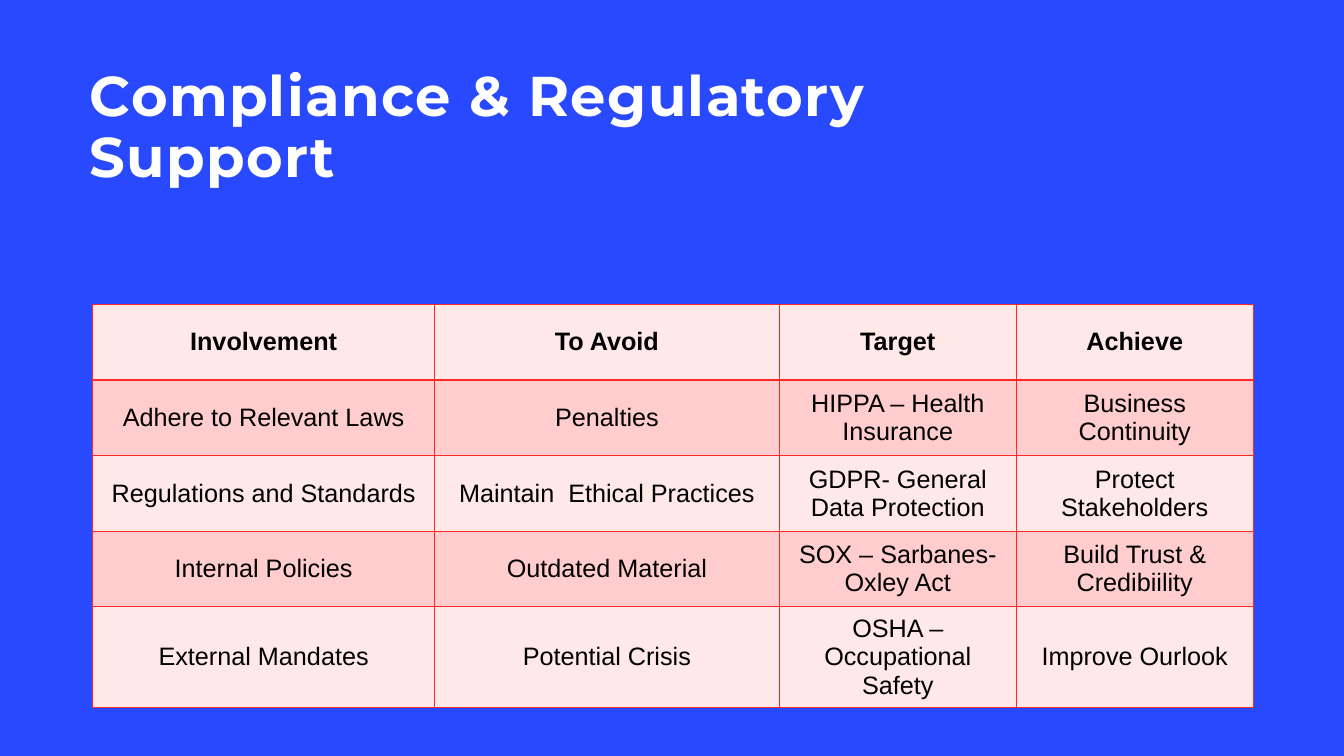
from lxml.etree import SubElement
from pptx import Presentation
from pptx.dml.color import RGBColor
from pptx.enum.text import MSO_ANCHOR, PP_ALIGN
from pptx.oxml.ns import qn
from pptx.util import Inches, Pt

BLUE = RGBColor(0x28, 0x49, 0xFD)
WHITE = RGBColor(0xFF, 0xFF, 0xFF)
BLACK = RGBColor(0, 0, 0)
RED = RGBColor(0xFF, 0x28, 0x28)
PALE = RGBColor(0xFF, 0xE8, 0xE8)
PINK = RGBColor(0xFF, 0xCD, 0xCD)

WIDE, HIGH = 13.33, 7.5
COLS = (3.39, 3.42, 2.35, 2.35)
ROW = HIGH / 10

ROWS = (
    ("Involvement", "To Avoid", "Target", "Achieve"),
    ("Adhere to Relevant Laws", "Penalties",
     "HIPPA – Health Insurance", "Business Continuity"),
    ("Regulations and Standards", "Maintain  Ethical Practices",
     "GDPR- General Data Protection", "Protect Stakeholders"),
    ("Internal Policies", "Outdated Material",
     "SOX – Sarbanes-Oxley Act", "Build Trust & Credibiility"),
    ("External Mandates", "Potential Crisis",
     "OSHA – Occupational Safety", "Improve Ourlook"),
)


def style(para, face, size, color, bold):
    """Format every run of a paragraph."""
    for run in para.runs:
        font = run.font
        font.name, font.size, font.bold = face, Pt(size), bold
        font.color.rgb = color


def add_title(slide, text):
    box = slide.shapes.add_textbox(
        Inches(0.89), Inches(0.68), Inches(WIDE * 0.6), Inches(2))
    frame = box.text_frame
    frame.word_wrap = True
    frame.margin_left = frame.margin_right = 0
    frame.margin_top = frame.margin_bottom = 0
    frame.text = text
    para = frame.paragraphs[0]
    para.line_spacing = 0.9
    style(para, "Montserrat", 40, WHITE, True)
    # Letter spacing of one point
    para.runs[0].font._element.set("spc", "100")


def add_edges(cell):
    """Draw a thin red line on all four sides; call before the fill is set."""
    props = cell._tc.get_or_add_tcPr()
    for side in ("a:lnL", "a:lnR", "a:lnT", "a:lnB"):
        line = SubElement(props, qn(side), w=str(Pt(1)))
        fill = SubElement(line, qn("a:solidFill"))
        SubElement(fill, qn("a:srgbClr"), val=str(RED))


def fill_cell(cell, text, back, bold):
    add_edges(cell)
    cell.fill.solid()
    cell.fill.fore_color.rgb = back
    cell.vertical_anchor = MSO_ANCHOR.MIDDLE
    cell.text_frame.text = text
    para = cell.text_frame.paragraphs[0]
    para.alignment = PP_ALIGN.CENTER
    style(para, "Arial", 18, BLACK, bold)


def add_grid(slide, rows):
    grid = slide.shapes.add_table(
        len(rows), len(COLS), Inches(0.92), Inches(3.02),
        Inches(sum(COLS)), Inches(ROW * len(rows))).table
    for col, width in zip(grid.columns, COLS):
        col.width = Inches(width)
    for r, row in enumerate(rows):
        grid.rows[r].height = Inches(ROW)
        for c, text in enumerate(row):
            fill_cell(grid.cell(r, c), text, PINK if r % 2 else PALE, r == 0)


def main():
    deck = Presentation()
    deck.slide_width, deck.slide_height = Inches(WIDE), Inches(HIGH)
    slide = deck.slides.add_slide(deck.slide_layouts[6])

    # Background
    slide.background.fill.solid()
    slide.background.fill.fore_color.rgb = BLUE

    # Heading and table
    add_title(slide, "Compliance & Regulatory Support")
    add_grid(slide, ROWS)
    deck.save("out.pptx")


if __name__ == "__main__":
    main()
